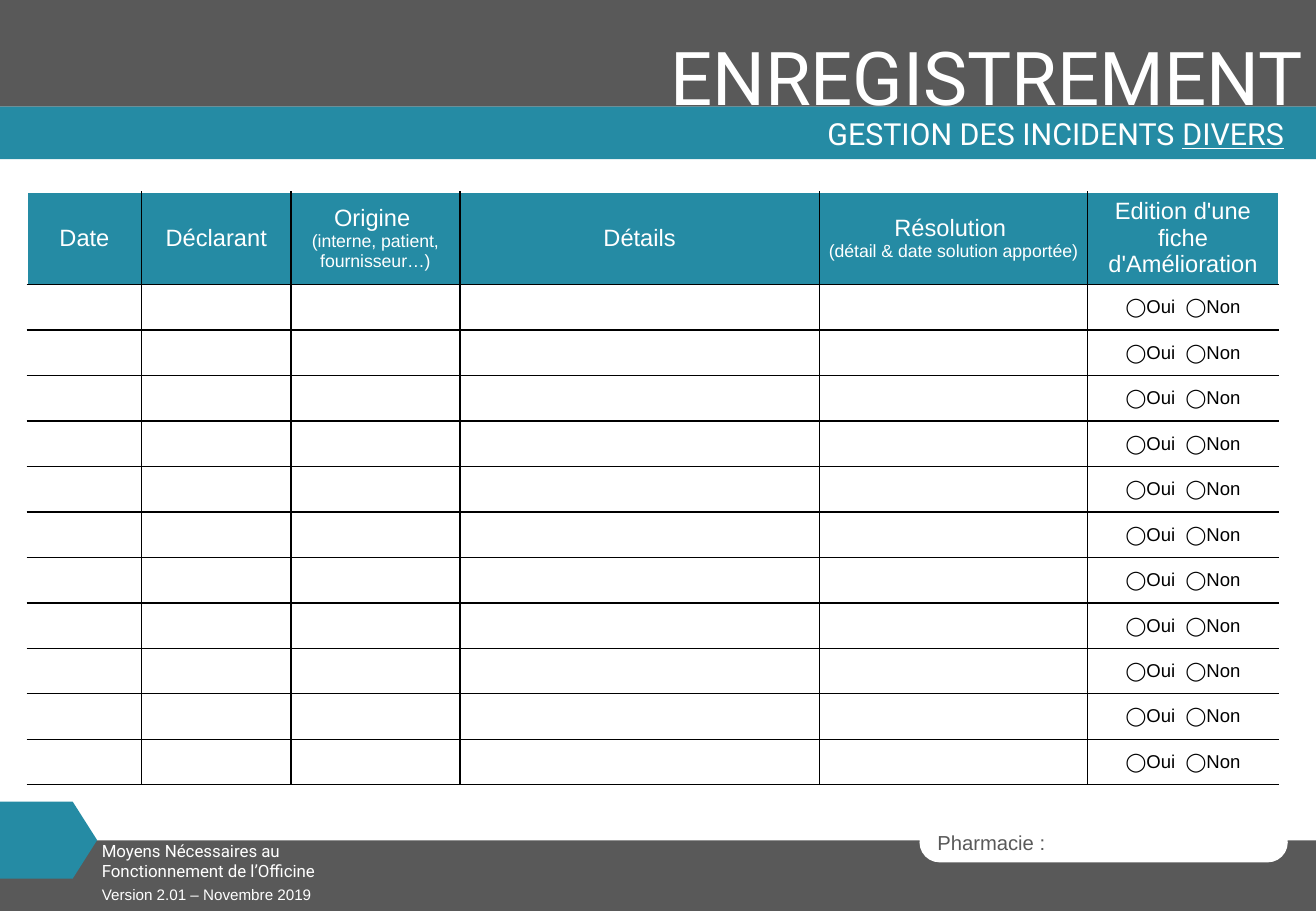
from lxml.etree import SubElement
from pptx import Presentation
from pptx.dml.color import RGBColor
from pptx.enum.shapes import MSO_SHAPE
from pptx.enum.text import MSO_ANCHOR, MSO_AUTO_SIZE, PP_ALIGN
from pptx.oxml.ns import qn
from pptx.util import Pt

GREY, TEAL, WHITE, BLACK = "595959", "258BA4", "FFFFFF", "000000"
COLUMNS = [
    (67.7, "Date", ""),
    (88.6, "Déclarant", ""),
    (100.1, "Origine ", "(interne, patient, fournisseur…)"),
    (213.1, "Détails", ""),
    (159.1, "Résolution ", "(détail & date solution apportée)"),
    (113, "Edition d'une fiche d'Amélioration", ""),
]
INCIDENT_ROWS = 11


def color(hex_code):
    return RGBColor.from_string(hex_code)


def add_run(paragraph, text, size, hex_code, font="Arial", underline=None):
    run = paragraph.add_run()
    run.text = text
    run.font.size = Pt(size)
    run.font.name = font
    run.font.underline = underline
    run.font.color.rgb = color(hex_code)


def add_block(slide, preset, left, top, width, height, hex_code):
    block = slide.shapes.add_shape(preset, Pt(left), Pt(top), Pt(width), Pt(height))
    block.shadow.inherit = False
    block.fill.solid()
    block.fill.fore_color.rgb = color(hex_code)
    block.line.fill.background()
    return block


def add_label(slide, left, top, width, height, text, size, font, wrap=True):
    label = slide.shapes.add_textbox(Pt(left), Pt(top), Pt(width), Pt(height))
    label.text_frame.word_wrap = wrap
    label.text_frame.auto_size = MSO_AUTO_SIZE.SHAPE_TO_FIT_TEXT
    paragraph = label.text_frame.paragraphs[0]
    add_run(paragraph, text, size, WHITE, font)
    return paragraph


def add_header(slide, left, top, width, height):
    grey_height = height * 0.67
    add_block(slide, MSO_SHAPE.RECTANGLE, left, top, width, grey_height, GREY)
    category = add_label(slide, left + width - 420.5, top + 15.1, 420.5, 60.5,
                         "ENREGISTREMENT", 44, "Roboto", wrap=False)
    category.alignment = PP_ALIGN.RIGHT
    add_block(slide, MSO_SHAPE.RECTANGLE, left, top + grey_height, width,
              height - grey_height, TEAL)

    title = slide.shapes.title
    title.element.getparent().append(title.element)
    title.left, title.top = Pt(left + 245.5), Pt(top + 67)
    title.width, title.height = Pt(522.7), Pt(26.6)
    frame = title.text_frame
    frame.word_wrap = True
    frame.auto_size = MSO_AUTO_SIZE.SHAPE_TO_FIT_TEXT
    frame.vertical_anchor = MSO_ANCHOR.MIDDLE
    subject = frame.paragraphs[0]
    subject.alignment = PP_ALIGN.RIGHT
    subject.line_spacing = 0.9
    add_run(subject, "GESTION DES INCIDENTS ", 18, WHITE, "Roboto")
    add_run(subject, "DIVERS", 18, WHITE, "Roboto", underline=True)


def add_borders(cell, sides):
    properties = cell._tc.get_or_add_tcPr()
    for position, side in enumerate(sides):
        border = properties.makeelement(qn(f"a:ln{side}"), {"w": str(Pt(1))})
        fill = SubElement(border, qn("a:solidFill"))
        SubElement(fill, qn("a:srgbClr"), val=BLACK)
        properties.insert(position, border)


def add_incident_table(slide, left, top, width, height):
    header_height = 54.8
    row_height = (height - header_height) / INCIDENT_ROWS
    last_column = len(COLUMNS) - 1
    table = slide.shapes.add_table(INCIDENT_ROWS + 1, len(COLUMNS), Pt(left), Pt(top),
                                   Pt(width), Pt(height)).table
    table.first_row = table.horz_banding = False
    for row_index, row in enumerate(table.rows):
        row.height = Pt(row_height if row_index else header_height)
        for column_index, (column_width, heading, detail) in enumerate(COLUMNS):
            table.columns[column_index].width = Pt(column_width)
            cell = table.cell(row_index, column_index)
            cell.margin_left = cell.margin_right = cell.margin_top = cell.margin_bottom = 0
            cell.vertical_anchor = MSO_ANCHOR.MIDDLE
            paragraph = cell.text_frame.paragraphs[0]
            paragraph.alignment = PP_ALIGN.CENTER
            if row_index == 0:
                cell.fill.solid()
                cell.fill.fore_color.rgb = color(TEAL)
                add_run(paragraph, heading, 14, WHITE)
                if detail:
                    explanation = cell.text_frame.add_paragraph()
                    explanation.alignment = PP_ALIGN.CENTER
                    add_run(explanation, detail, 10.5, WHITE)
            else:
                cell.fill.background()
                if column_index == last_column:
                    add_run(paragraph, "◯Oui  ◯Non", 11, BLACK)
            add_borders(cell, ("L" if column_index else "")
                        + ("R" if column_index < last_column else "")
                        + ("T" if row_index else "") + "B")


def add_footer(slide, left, top, width, height):
    add_block(slide, MSO_SHAPE.RECTANGLE, left, top, width, height, GREY)

    pharmacy = add_block(slide, MSO_SHAPE.ROUNDED_RECTANGLE, left + 545, top - 10.8,
                         218.3, 23.8, WHITE)
    pharmacy.adjustments[0] = 0.5
    pharmacy.text_frame.vertical_anchor = MSO_ANCHOR.MIDDLE
    pharmacy_name = pharmacy.text_frame.paragraphs[0]
    pharmacy_name.alignment = PP_ALIGN.LEFT
    add_run(pharmacy_name, "Pharmacie :", 12, GREY)

    tab = add_block(slide, MSO_SHAPE.PENTAGON, left, top - 23, 57.6, 45.6, TEAL)
    tab.adjustments[0] = 0.317
    add_label(slide, left + 53.3, top - 3.6, 182.2, 31.7,
              "Moyens Nécessaires au Fonctionnement de l’Officine", 10, "Roboto")
    add_label(slide, left + 53.3, top + 23, 423.4, 18,
              "Version 2.01 – Novembre 2019", 9, "Arial")


def main():
    presentation = Presentation()
    presentation.slide_width, presentation.slide_height = Pt(780), Pt(540)
    slide = presentation.slides.add_slide(presentation.slide_layouts[5])
    add_footer(slide, 0, 498.2, 780, 41.8)
    add_header(slide, 0, 0, 780, 94.3)
    add_incident_table(slide, 16.2, 113.8, 741.6, 351.4)
    presentation.save("out.pptx")


if __name__ == "__main__":
    main()
